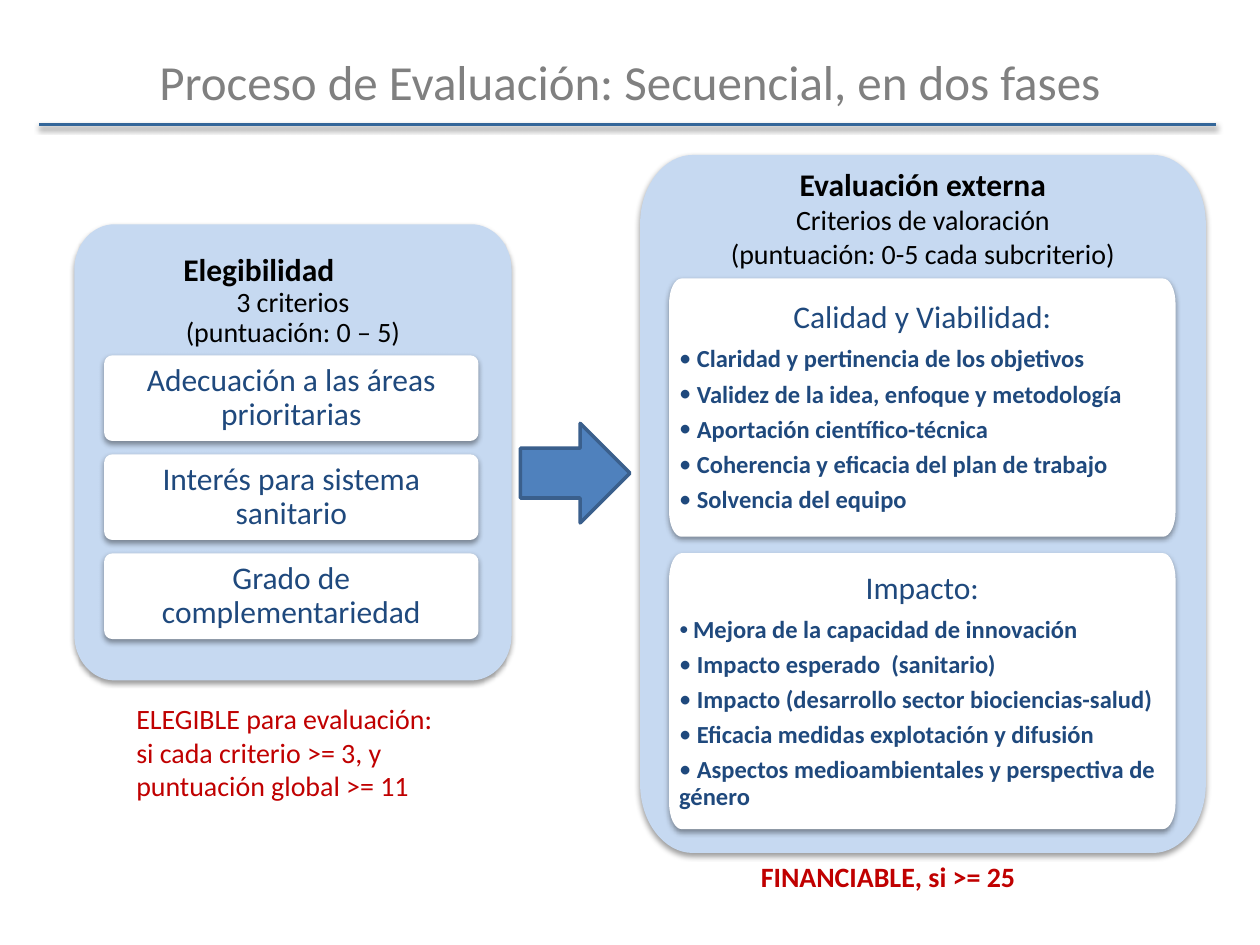
from dataclasses import dataclass

from lxml import etree
from pptx import Presentation, util as u
from pptx.dml.color import RGBColor
from pptx.enum import shapes, text
from pptx.oxml import ns

CELL = u.Inches(0.1)  # grid of 100 columns by 75 rows
ROUNDNESS = 0.55  # pull of a curve towards its corner, for a quarter ellipse
CENTER, LEFT = text.PP_ALIGN.CENTER, text.PP_ALIGN.LEFT
MIDDLE, TOP = text.MSO_ANCHOR.MIDDLE, text.MSO_ANCHOR.TOP


@dataclass(frozen=True)
class Theme:
    font: str = "Calibri"
    gray: str = "808080"
    rule: str = "336699"
    panel: str = "C6D9F1"
    card: str = "FFFFFF"
    ink: str = "000000"
    navy: str = "1F497D"
    red: str = "C00000"
    arrow: str = "4F81BD"
    arrow_edge: str = "3A5F8C"
    title: int = 28
    heading: int = 18
    body: int = 16
    bullet: int = 14
    small: int = 11
    tight: float = 0.9
    gap: float = 0.35


THEME = Theme()


def grid(*cells):
    return [round(cell * CELL) for cell in cells]


def rgb(color):
    return RGBColor.from_string(color)


def write(frame, content, size=THEME.body, color=THEME.ink, bold=False, align=LEFT,
          spacing=None, after=0, bullet_lead=None, right_margin=0):
    """Add a paragraph; bullet_lead is the size of the space after its bullet."""
    paragraph = frame.paragraphs[0] if not frame.text else frame.add_paragraph()
    paragraph.alignment = align
    paragraph.line_spacing = spacing
    paragraph.space_after = u.Pt(after)
    properties = paragraph._p.get_or_add_pPr()
    properties.set("marR", str(u.Inches(right_margin)))
    pieces = [(content, size)]
    if bullet_lead:
        etree.SubElement(properties, ns.qn("a:buFont")).set("typeface", THEME.font)
        etree.SubElement(properties, ns.qn("a:buChar")).set("char", "•")
        if bullet_lead == size:
            pieces = [(" " + content, size)]
        else:
            pieces = [(" ", bullet_lead), (content, size)]
    for piece, piece_size in pieces:
        run = paragraph.add_run()
        run.text = piece
        run.font.name = THEME.font
        run.font.size = u.Pt(piece_size)
        run.font.bold = bold
        run.font.color.rgb = rgb(color)


def add_shadow(properties):
    effects = properties.find(ns.qn("a:effectLst"))
    if effects is None:
        effects = etree.SubElement(properties, ns.qn("a:effectLst"))
    shadow = etree.SubElement(effects, ns.qn("a:outerShdw"), blurRad=str(u.Pt(3.1)),
                              dist=str(u.Pt(1.6)), dir="5400000", rotWithShape="0")
    color = etree.SubElement(shadow, ns.qn("a:srgbClr"), val=THEME.ink)
    etree.SubElement(color, ns.qn("a:alpha"), val="38000")


def chamfered_outline(left, top, width, height, radius_x, radius_y):
    """Points of a rectangle with cut corners, clockwise from the lower right."""
    right, bottom = left + width, top + height
    return [grid(*point) for point in (
        (right, bottom - radius_y), (right - radius_x, bottom),
        (left + radius_x, bottom), (left, bottom - radius_y),
        (left, top + radius_y), (left + radius_x, top),
        (right - radius_x, top), (right, top + radius_y))]


def round_corners(shape):
    """Turn every second segment of a chamfered outline into a curve."""
    outline = next(shape._element.iter(ns.qn("a:path")))
    segments = list(outline)[:8]
    ends = [[int(segment[0].get(axis)) for axis in "xy"] for segment in segments]
    for index in range(0, 8, 2):
        start, end = ends[index], ends[index + 1]
        corner = (end[0], start[1]) if index % 4 else (start[0], end[1])
        curve = etree.Element(ns.qn("a:cubicBezTo"))
        for base in (start, end):
            x, y = (round(b + ROUNDNESS * (c - b)) for b, c in zip(base, corner))
            etree.SubElement(curve, ns.qn("a:pt"), x=str(x), y=str(y))
        etree.SubElement(curve, ns.qn("a:pt"), x=str(end[0]), y=str(end[1]))
        outline.replace(segments[index + 1], curve)


class Board:
    def __init__(self, slide, theme):
        self.slide, self.theme = slide, theme

    def frame(self, shape, anchor, margins):
        frame = shape.text_frame
        frame.word_wrap = True
        frame.vertical_anchor = anchor
        (frame.margin_left, frame.margin_top,
         frame.margin_right, frame.margin_bottom) = map(u.Inches, margins)
        return frame

    def textbox(self, *box, anchor=TOP):
        shape = self.slide.shapes.add_textbox(*grid(*box))
        return self.frame(shape, anchor, (0.1, 0.05, 0.1, 0.05))

    def rounded(self, *box, radius, fill, margins=(0.08, 0.06, 0.08, 0.06)):
        start, *rest = chamfered_outline(*box, *radius)
        builder = self.slide.shapes.build_freeform(*start)
        builder.add_line_segments(rest, close=True)
        shape = builder.convert_to_shape()
        round_corners(shape)
        shape.fill.solid()
        shape.fill.fore_color.rgb = rgb(fill)
        shape.line.fill.background()
        shape.shadow.inherit = False
        add_shadow(shape._element.spPr)
        return self.frame(shape, MIDDLE, margins)

    def rule(self, left, right, row):
        line = self.slide.shapes.add_connector(
            shapes.MSO_CONNECTOR.STRAIGHT, *grid(left, row, right, row))
        line.line.color.rgb = rgb(self.theme.rule)
        line.line.width = u.Pt(2)
        add_shadow(line._element.spPr)

    def arrow(self, *box):
        shape = self.slide.shapes.add_shape(shapes.MSO_SHAPE.RIGHT_ARROW, *grid(*box))
        shape.shadow.inherit = False
        shape.fill.solid()
        shape.fill.fore_color.rgb = rgb(self.theme.arrow)
        shape.line.color.rgb = rgb(self.theme.arrow_edge)
        shape.line.width = u.Pt(2)

    def card(self, *box, radius, heading, items=(), first_lead=THEME.bullet):
        theme = self.theme
        frame = self.rounded(*box, radius=radius, fill=theme.card)
        write(frame, heading, size=theme.heading, color=theme.navy, align=CENTER,
              spacing=theme.tight, after=theme.gap * theme.heading)
        for index, item in enumerate(items):
            write(frame, item, size=theme.bullet, color=theme.navy, bold=True,
                  spacing=theme.tight, after=theme.gap * theme.bullet,
                  bullet_lead=theme.bullet if index else first_lead)


def draw_eligibility(board):
    theme = board.theme
    panel = board.rounded(5.9, 17.8, 34.7, 36.2, radius=(3.2, 3.6), fill=theme.panel,
                          margins=(0.08, 0.08, 0.08, 2.48))
    write(panel, "Elegibilidad", size=theme.heading, bold=True, align=CENTER,
          spacing=theme.tight, right_margin=0.54)
    for line in ("3 criterios", "(puntuación: 0 – 5)"):
        write(panel, line, align=CENTER, spacing=theme.tight)
    criteria = ("Adecuación a las áreas prioritarias", "Interés para sistema sanitario",
                "Grado de complementariedad")
    for index, criterion in enumerate(criteria):
        board.card(8.27, 28.2 + 7.86 * index, 29.7, 6.8, radius=(0.65, 0.65),
                   heading=criterion)
    note = board.textbox(9.83, 55.2, 29.1, 9.1)
    for line in ("ELEGIBLE para evaluación:", "si cada criterio >= 3, y puntuación global >= 11"):
        write(note, line, color=theme.red)


def draw_external_evaluation(board):
    theme = board.theme
    board.rounded(50.8, 12.3, 44.9, 55.4, radius=(4.2, 5.5), fill=theme.panel)
    header = board.textbox(56.3, 12.6, 33.9, 9.4)
    write(header, "Evaluación externa", size=theme.heading, bold=True, align=CENTER)
    for line in ("Criterios de valoración", "(puntuación: 0-5 cada subcriterio)"):
        write(header, line, align=CENTER)
    board.card(53.1, 22.1, 40.2, 20.5, radius=(1, 2), heading="Calidad y Viabilidad:", items=(
        "Claridad y pertinencia de los objetivos",
        "Validez de la idea, enfoque y metodología",
        "Aportación científico-técnica",
        "Coherencia y eficacia del plan de trabajo",
        "Solvencia del equipo"))
    board.card(53.1, 43.9, 40.2, 21.9, radius=(1, 2.1), heading="Impacto:", items=(
        "Mejora de la capacidad de innovación", "Impacto esperado  (sanitario)",
        "Impacto (desarrollo sector biociencias-salud)",
        "Eficacia medidas explotación y difusión",
        "Aspectos medioambientales y perspectiva de género"), first_lead=theme.small)
    write(board.textbox(59.4, 67.7, 28.3, 3.7), "FINANCIABLE, si >= 25",
          color=theme.red, bold=True)


def main():
    presentation = Presentation()
    presentation.slide_width, presentation.slide_height = grid(100, 75)
    slide = presentation.slides.add_slide(presentation.slide_layouts[6])
    board = Board(slide, THEME)
    board.rule(3.1, 96.5, 9.9)
    write(board.textbox(5, 3, 90, 6.9, anchor=MIDDLE),
          "Proceso de Evaluación: Secuencial, en dos fases",
          size=THEME.title, color=THEME.gray, align=CENTER)
    draw_eligibility(board)
    draw_external_evaluation(board)
    board.arrow(41.3, 33.6, 8.7, 7.9)
    presentation.save("out.pptx")


if __name__ == "__main__":
    main()
